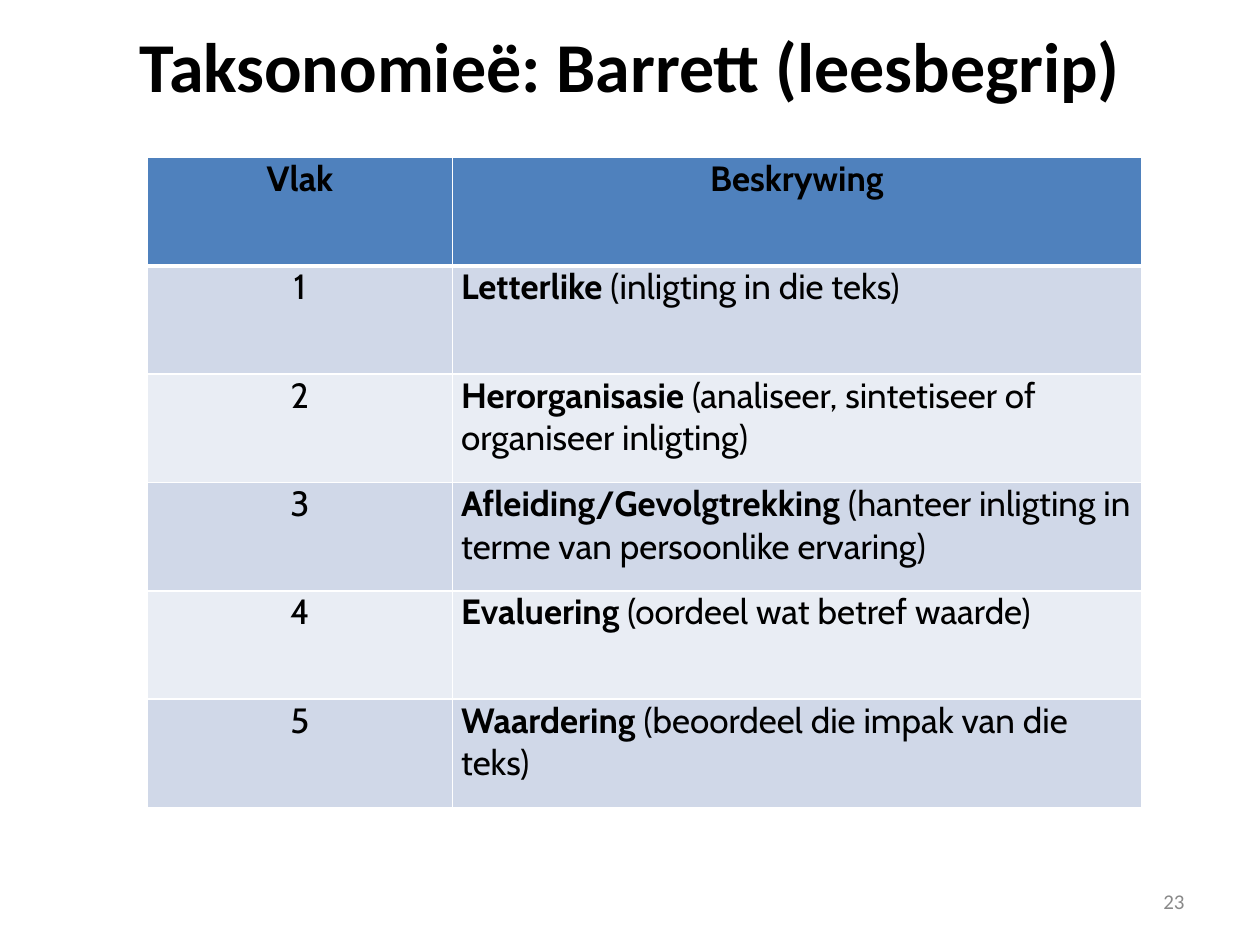
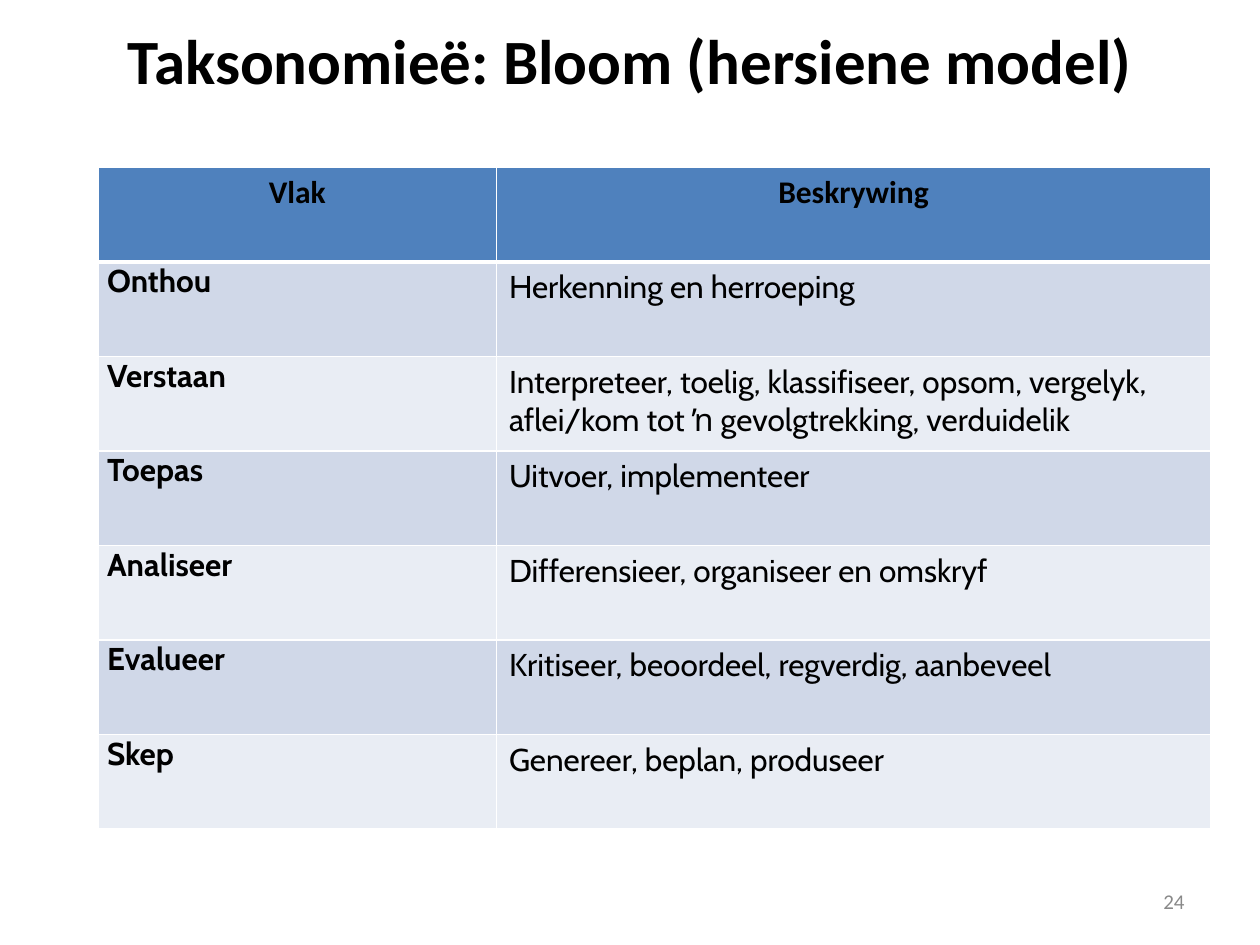
from lxml import etree
from pptx import Presentation, util as u
from pptx.dml.color import RGBColor
from pptx.enum import text
from pptx.oxml.ns import qn

EMU_PER_PX = 9144
COLOURS = {"ink": "000000", "muted": "898989", "rule": "FFFFFF",
           "header": "4F81BD", "odd": "D0D8E8", "even": "E9EDF4"}
LEFT, CENTRE = text.PP_ALIGN.LEFT, text.PP_ALIGN.CENTER
RIGHT, JUSTIFIED = text.PP_ALIGN.RIGHT, text.PP_ALIGN.JUSTIFY
TIGHT, ROOMY = (7, 0), (10, 5)
HEADINGS = ("Vlak", "Beskrywing")


def px(length):
    return u.Emu(length * EMU_PER_PX)


class SlideBuilder:
    def __init__(self):
        self.deck = Presentation()
        self.deck.slide_width, self.deck.slide_height = px(1000), px(750)
        self.page = None

    def add_page(self, title, size, height, number):
        self.page = self.deck.slides.add_slide(self.deck.slide_layouts[0])
        subtitle = self.page.placeholders[1].element
        subtitle.getparent().remove(subtitle)
        box = self.page.shapes.title
        box.left, box.top, box.width, box.height = map(px, (75, 0, 850, height))
        self.fill_box(box, title, CENTRE, "Calibri", size, "ink", True)
        footer = self.page.shapes.add_textbox(*map(px, (717, 695, 233, 40)))
        self.fill_box(footer, str(number), RIGHT, "Calibri", 12, "muted", False)

    def fill_box(self, box, words, align, font, size, colour, bold):
        frame = box.text_frame
        frame.word_wrap = True
        frame.auto_size = text.MSO_AUTO_SIZE.NONE
        frame.vertical_anchor = text.MSO_ANCHOR.MIDDLE
        self.set_text(frame.paragraphs[0], [(words, bold)], align, font, size, colour)

    def set_text(self, para, spans, align, font, size, colour="ink"):
        para.alignment = align
        para.font.name, para.font.size = font, u.Pt(size)
        para.font.color.rgb = RGBColor.from_string(COLOURS[colour])
        for words, bold in spans:
            span = para.add_run()
            span.text = words
            span.font.bold = bold

    def add_table(self, left, top, widths, row_height, size, header, columns, rows):
        header_font, header_inset = header
        count = len(rows) + 1
        frame = self.page.shapes.add_table(
            count, len(widths), px(left), px(top), px(sum(widths)), px(row_height * count))
        table = frame.table
        for column, width in zip(table.columns, widths):
            column.width = px(width)
        for row in table.rows:
            row.height = px(row_height)
        for index, heading in enumerate(HEADINGS):
            cell = table.cell(0, index)
            self.style_cell(cell, "header", header_inset, 1, 3)
            self.set_text(cell.text_frame.paragraphs[0], [(heading, True)],
                          CENTRE, header_font, size)
        for number, row in enumerate(rows, 1):
            shade = "odd" if number % 2 else "even"
            for index, (spans, (align, inset)) in enumerate(zip(row, columns)):
                cell = table.cell(number, index)
                self.style_cell(cell, shade, inset, 3 if number == 1 else 1, 1)
                self.set_text(cell.text_frame.paragraphs[0], spans, align, "Cabin", size)

    def style_cell(self, cell, shade, inset, top_rule, bottom_rule):
        cell.margin_left = cell.margin_right = px(inset[0])
        cell.margin_top = cell.margin_bottom = px(inset[1])
        cell.fill.solid()
        cell.fill.fore_color.rgb = RGBColor.from_string(COLOURS[shade])
        properties = cell._tc.get_or_add_tcPr()
        rules = {"a:lnL": 1, "a:lnR": 1, "a:lnT": top_rule, "a:lnB": bottom_rule}
        for place, (tag, points) in enumerate(rules.items()):
            line = etree.Element(qn(tag), w=str(u.Pt(points)))
            fill = etree.SubElement(line, qn("a:solidFill"))
            etree.SubElement(fill, qn("a:srgbClr"), val=COLOURS["rule"])
            properties.insert(place, line)


def main():
    builder = SlideBuilder()

    barrett_levels = [
        ("Letterlike", " (inligting in die teks)"),
        ("Herorganisasie", " (analiseer, sintetiseer of organiseer inligting)"),
        ("Afleiding/Gevolgtrekking", " (hanteer inligting in terme van persoonlike ervaring)"),
        ("Evaluering", " (oordeel wat betref waarde)"),
        ("Waardering", " (beoordeel die impak van die teks)"),
    ]
    builder.add_page("Taksonomieë: Barrett (leesbegrip)", 40, 102, 23)
    builder.add_table(
        117, 125, (242, 547), 86, 20, ("Cabin", TIGHT),
        ((CENTRE, TIGHT), (LEFT, TIGHT)),
        [([(str(level), False)], [(name, True), (meaning, False)])
         for level, (name, meaning) in enumerate(barrett_levels, 1)])

    bloom_levels = [
        ("Onthou", "Herkenning en herroeping"),
        ("Verstaan", "Interpreteer, toelig, klassifiseer, opsom, vergelyk, "
                     "aflei/kom tot ŉ gevolgtrekking, verduidelik"),
        ("Toepas", "Uitvoer, implementeer"),
        ("Analiseer", "Differensieer, organiseer en omskryf"),
        ("Evalueer", "Kritiseer, beoordeel, regverdig, aanbeveel"),
        ("Skep", "Genereer, beplan, produseer"),
    ]
    builder.add_page("Taksonomieë: Bloom (hersiene model)", 36, 94, 24)
    builder.add_table(
        78, 133, (316, 567), 75, 18, ("Calibri", ROOMY),
        ((JUSTIFIED, TIGHT), (LEFT, ROOMY)),
        [([(name, True)], [(meaning, False)]) for name, meaning in bloom_levels])

    builder.deck.save("out.pptx")


if __name__ == "__main__":
    main()
